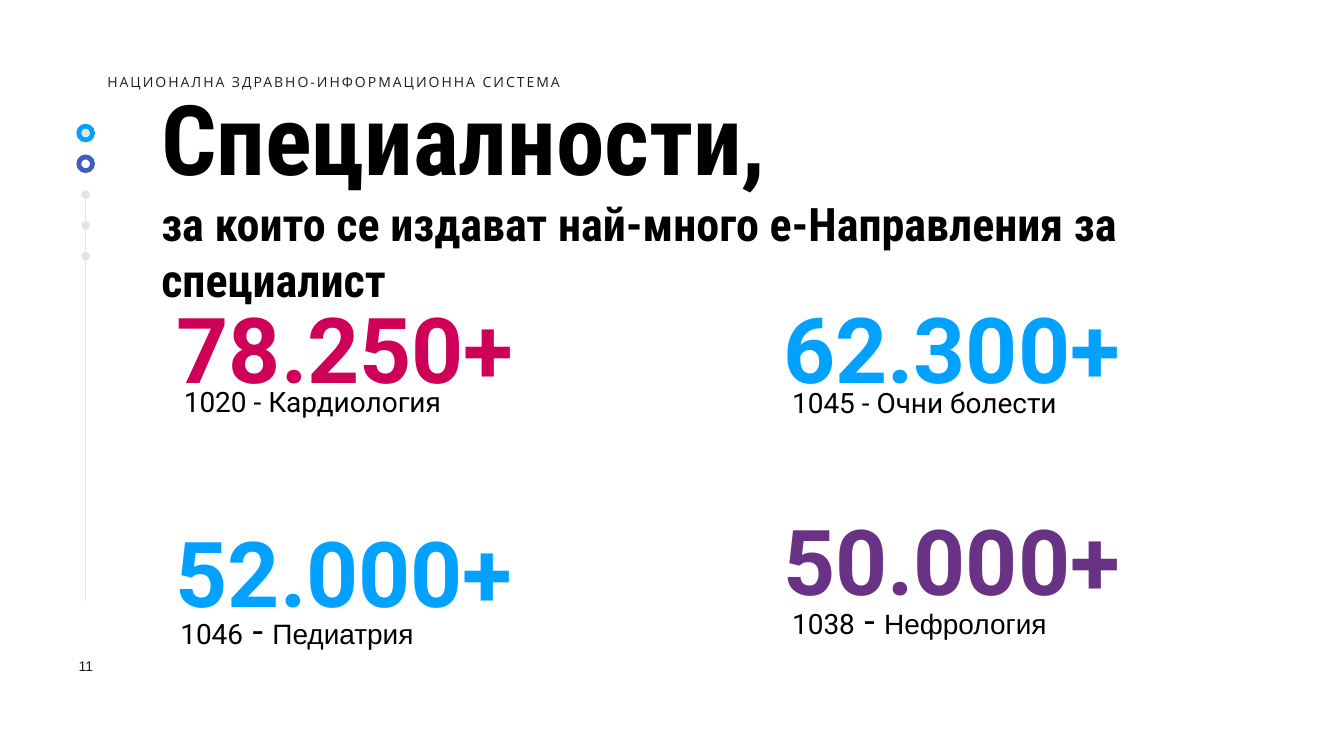
from lxml.etree import SubElement
from pptx import Presentation
from pptx.dml.color import RGBColor
from pptx.enum.shapes import MSO_CONNECTOR as Connector, MSO_SHAPE as Shape
from pptx.enum.text import MSO_ANCHOR as Anchor, MSO_AUTO_SIZE as AutoSize, PP_ALIGN as Align
from pptx.oxml.ns import qn
from pptx.util import Inches, Pt

COLORS = {
    "black": "000000", "ink": "1B1E20", "white": "FFFFFF", "grey": "E4E4E4",
    "blue": "00A1FF", "indigo": "3E5DBF", "crimson": "CF0057", "purple": "693285",
}


class StatSlide:
    def __init__(self, prs):
        self.slide = prs.slides.add_slide(prs.slide_layouts[5])
        self.shapes = self.slide.shapes

    def style(self, run, size, font="Roboto", color="black", bold=False):
        run.font.size = Pt(size)
        run.font.name = font
        run.font.bold = bold
        run.font.color.rgb = RGBColor.from_string(COLORS[color])

    def title(self, heading, subtitle, left, top, width, height):
        title = self.shapes.title
        title.left, title.top = Inches(left), Inches(top)
        title.width, title.height = Inches(width), Inches(height)
        frame = title.text_frame
        frame.text = f"{heading}\v{subtitle}"
        frame.auto_size = AutoSize.NONE
        frame.vertical_anchor = Anchor.TOP
        paragraph = frame.paragraphs[0]
        paragraph.alignment = Align.LEFT
        for run, size in zip(paragraph.runs, (139, 66)):
            self.style(run, size, "Roboto Condensed", bold=True)

    def text(self, parts, left, top, width, height, wrap=True):
        """Add a one-paragraph box; each part is (text, style arguments)."""
        box = self.shapes.add_textbox(*map(Inches, (left, top, width, height)))
        box.text_frame.word_wrap = wrap
        paragraph = box.text_frame.paragraphs[0]
        for words, look in parts:
            run = paragraph.add_run()
            run.text = words
            self.style(run, **look)
        return box.text_frame

    def dot(self, center_x, center_y, diameter, color):
        corner = (center_x - diameter / 2, center_y - diameter / 2)
        dot = self.shapes.add_shape(Shape.OVAL, *map(Inches, (*corner, diameter, diameter)))
        dot.shadow.inherit = False
        dot.fill.solid()
        dot.fill.fore_color.rgb = RGBColor.from_string(COLORS[color])
        dot.line.fill.background()

    def rail(self, x, bottom, top):
        rail = self.shapes.add_connector(
            Connector.STRAIGHT, *map(Inches, (x, bottom, x, top)))
        rail.line.color.rgb = RGBColor.from_string(COLORS["grey"])
        rail.line.width = Pt(2)
        SubElement(rail._element.spPr, qn("a:effectLst"))


def label_parts(code, specialty):
    return [(code, {"size": 40}), (" - ", {"size": 54}),
            (specialty, {"size": 40, "font": "Arial"})]


def main():
    prs = Presentation()
    prs.slide_width, prs.slide_height = Inches(26.67), Inches(15)
    page = StatSlide(prs)
    page.title("Специалности,", "за които се издават най-много е-Направления за специалист",
               3.1, 1.51, 23.26, 4.66)

    # Progress rail: evenly spaced steps, the first two ringed
    rail_x, first_y, step = 1.7, 2.64, 0.61
    for rail_top in (3.94, 6.51):
        page.rail(rail_x, 11.92, rail_top)
    for index, ring in enumerate(("blue", "indigo")):
        page.dot(rail_x, first_y + index * step, 0.37, ring)
    for index, core in enumerate(("grey", "white", "grey", "grey", "grey")):
        page.dot(rail_x, first_y + index * step, 0.17, core)

    # Each figure: count, colour, its corner; label parts, their box
    figures = [
        ("78.250+", "crimson", (3.41, 5.76),
         [("1020 - Кардиология", {"size": 40})], (3.55, 7.58, 7.14, 0.77)),
        ("62.300+", "blue", (15.44, 5.76),
         [("1045 - Очни болести", {"size": 40})], (15.62, 7.6, 6.82, 0.77)),
        ("52.000+", "blue", (3.39, 10.2),
         label_parts("1046", "Педиатрия"), (3.48, 11.98, 7.42, 1.01)),
        ("50.000+", "purple", (15.44, 9.96),
         label_parts("1038", "Нефрология"), (15.62, 11.79, 10.74, 1.01)),
    ]
    for count, color, corner, label, label_box in figures:
        page.text([(count, {"size": 130, "color": color, "bold": True})], *corner, 7.57, 2.29)
        page.text(label, *label_box)

    header = page.text([("НАЦИОНАЛНА ЗДРАВНО-ИНФОРМАЦИОННА СИСТЕМА",
                         {"size": 20, "font": "Open Sans", "color": "ink"})],
                       2.07, 1.39, 9.62, 0.45, wrap=False)
    header.vertical_anchor = Anchor.MIDDLE
    header.margin_left = header.margin_right = Inches(0.06)
    header.margin_top = header.margin_bottom = Inches(0.06)
    header.paragraphs[0].runs[0]._r.get_or_add_rPr().set("spc", "280")

    page_number = page.text([("11", {"size": 20, "font": "Arial", "color": "ink"})],
                            1.36, 12.99, 0.69, 0.49)
    page_number.paragraphs[0].alignment = Align.CENTER

    prs.save("out.pptx")


if __name__ == "__main__":
    main()
